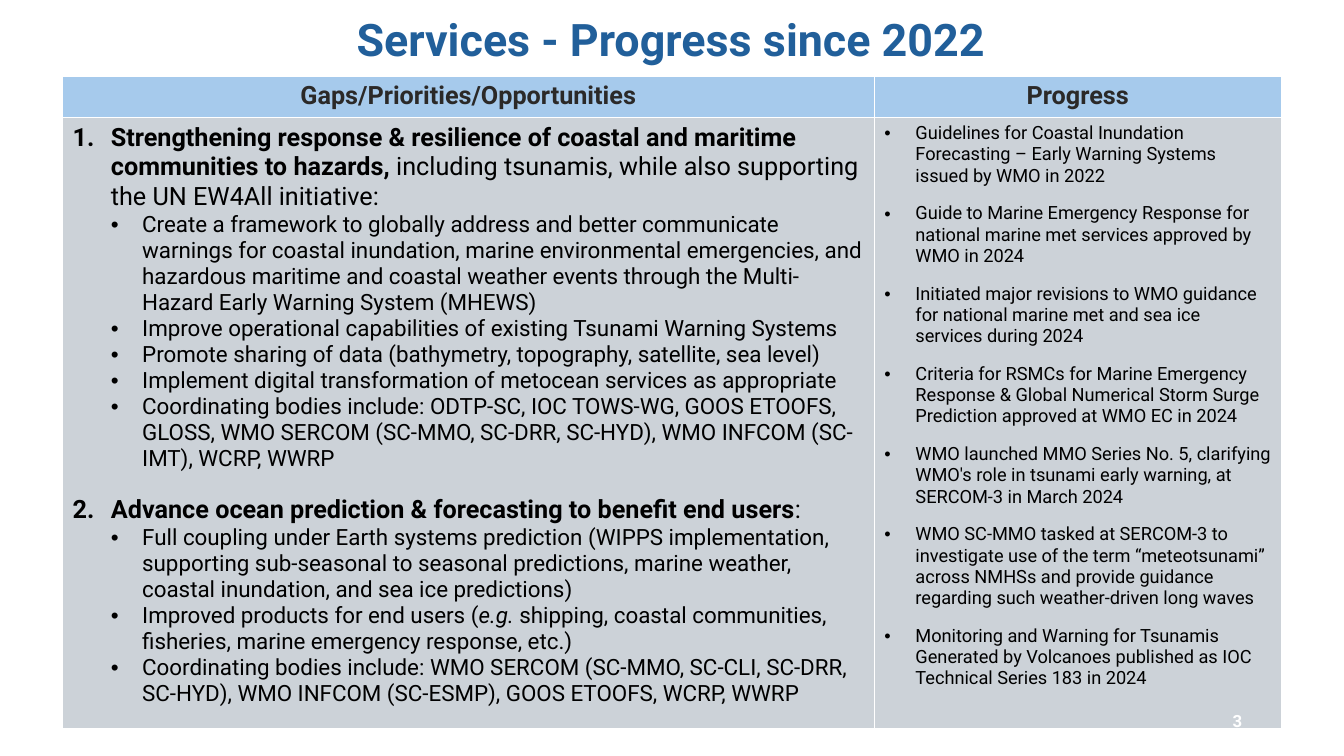
from dataclasses import dataclass

from lxml import etree
from pptx import Presentation
from pptx.dml.color import RGBColor
from pptx.enum import text
from pptx.oxml import ns
from pptx.util import Inches, Pt


@dataclass(frozen=True)
class Theme:
    font: str = "Roboto"
    title: str = "215F9A"
    heading: str = "2B2928"
    body: str = "000000"
    white: str = "FFFFFF"
    header_fill: str = "A6CAEC"
    body_fill: str = "CCD2D8"
    title_size: int = 32
    heading_size: int = 18
    point_size: int = 16
    progress_size: int = 13
    number_size: int = 12


THEME = Theme()
ALIGN = text.PP_ALIGN

# Each priority: bold lead, plain continuation, points made of (text, italic) runs
PRIORITIES = [
    ("Strengthening response & resilience of coastal and maritime communities to hazards, ",
     "including tsunamis, while also supporting the UN EW4All initiative:",
     [[("Create a framework to globally address and better communicate warnings for coastal "
        "inundation, marine environmental emergencies, and hazardous maritime and coastal "
        "weather events through the Multi-Hazard Early Warning System (MHEWS)", False)],
      [("Improve operational capabilities of existing Tsunami Warning Systems", False)],
      [("Promote sharing of data (bathymetry, topography, satellite, sea level)", False)],
      [("Implement digital transformation of metocean services as appropriate", False)],
      [("Coordinating bodies include: ODTP-SC, IOC TOWS-WG, GOOS ETOOFS, GLOSS, WMO SERCOM "
        "(SC-MMO, SC-DRR, SC-HYD), WMO INFCOM (SC-IMT), WCRP, WWRP", False)]]),
    ("Advance ocean prediction & forecasting to benefit end users",
     ":",
     [[("Full coupling under Earth systems prediction (WIPPS implementation, supporting "
        "sub-seasonal to seasonal predictions, marine weather, coastal inundation, and sea "
        "ice predictions)", False)],
      [("Improved products for end users (", False), ("e.g. ", True),
       ("shipping, coastal communities, fisheries, marine emergency response, etc.)", False)],
      [("Coordinating bodies include: WMO SERCOM (SC-MMO, SC-CLI, SC-DRR, SC-HYD), WMO "
        "INFCOM (SC-ESMP), GOOS ETOOFS, WCRP, WWRP", False)]]),
]

PROGRESS = [
    "Guidelines for Coastal Inundation Forecasting – Early Warning Systems issued by WMO in 2022",
    "Guide to Marine Emergency Response for national marine met services approved by WMO in 2024",
    "Initiated major revisions to WMO guidance for national marine met and sea ice services "
    "during 2024",
    "Criteria for RSMCs for Marine Emergency Response & Global Numerical Storm Surge Prediction "
    "approved at WMO EC in 2024",
    "WMO launched MMO Series No. 5, clarifying WMO's role in tsunami early warning, at SERCOM-3 "
    "in March 2024",
    "WMO SC-MMO tasked at SERCOM-3 to investigate use of the term “meteotsunami” across NMHSs "
    "and provide guidance regarding such weather-driven long waves",
    "Monitoring and Warning for Tsunamis Generated by Volcanoes published as IOC Technical "
    "Series 183 in 2024",
]


def add_run(paragraph, wording, size, color, bold=False, italic=False):
    run = paragraph.add_run()
    run.text = wording
    font = run.font
    font.name, font.size, font.bold, font.italic = THEME.font, Pt(size), bold, italic
    font.color.rgb = RGBColor.from_string(color)


def next_paragraph(frame):
    """Return the unused first paragraph, or a new one."""
    first = frame.paragraphs[0]
    return frame.add_paragraph() if first.runs else first


def set_marker(paragraph, margin, hanging, number=None):
    """Give a hanging number, or a bullet when there is no number."""
    props = paragraph._p.get_or_add_pPr()
    props.set("marL", str(Inches(margin)))
    props.set("indent", str(-Inches(hanging)))
    if number:
        etree.SubElement(props, ns.qn("a:buFont"), typeface="+mj-lt")
        etree.SubElement(props, ns.qn("a:buAutoNum"), type="arabicPeriod", startAt=str(number))
    else:
        etree.SubElement(props, ns.qn("a:buFont"), typeface="Arial")
        etree.SubElement(props, ns.qn("a:buChar"), char="•")


def style_cell(cell, fill):
    cell.fill.solid()
    cell.fill.fore_color.rgb = RGBColor.from_string(fill)
    props = cell._tc.get_or_add_tcPr()
    for position, side in enumerate(("lnL", "lnR", "lnT", "lnB")):
        border = etree.Element(ns.qn(f"a:{side}"), w=str(Pt(1)))
        solid = etree.SubElement(border, ns.qn("a:solidFill"))
        etree.SubElement(solid, ns.qn("a:srgbClr"), val=THEME.white)
        props.insert(position, border)


def fill_title(slide, left, top, width, height):
    title = slide.shapes.title
    title.left, title.top, title.width, title.height = map(Inches, (left, top, width, height))
    frame = title.text_frame
    frame.vertical_anchor = text.MSO_ANCHOR.TOP
    frame.auto_size = text.MSO_AUTO_SIZE.NONE
    heading = frame.paragraphs[0]
    heading.alignment = ALIGN.CENTER
    add_run(heading, "Services - Progress since 2022", THEME.title_size, THEME.title, bold=True)


def fill_priorities(frame):
    for number, (lead, continuation, points) in enumerate(PRIORITIES, 1):
        priority = next_paragraph(frame)
        if number > 1:
            priority.space_before = Pt(16.5)
        set_marker(priority, 0.38, 0.38, number)
        add_run(priority, lead, THEME.heading_size, THEME.body, bold=True)
        add_run(priority, continuation, THEME.heading_size, THEME.body)
        for runs in points:
            point = frame.add_paragraph()
            point.level = 1
            set_marker(point, 0.69, 0.31)
            for wording, italic in runs:
                add_run(point, wording, THEME.point_size, THEME.body, italic=italic)


def fill_progress(frame):
    for achievement in PROGRESS:
        item = next_paragraph(frame)
        item.space_after = Pt(12)
        set_marker(item, 0.31, 0.31)
        add_run(item, achievement, THEME.progress_size, THEME.body)


def add_progress_table(slide, left, top, width, height):
    header_height, priorities_width = 0.41, 8.05
    table = slide.shapes.add_table(2, 2, *map(Inches, (left, top, width, height))).table
    table.columns[0].width = Inches(priorities_width)
    table.columns[1].width = Inches(width - priorities_width)
    table.rows[0].height = Inches(header_height)
    table.rows[1].height = Inches(height - header_height)

    columns = [("Gaps/Priorities/Opportunities", fill_priorities), ("Progress", fill_progress)]
    for index, (heading, fill_body) in enumerate(columns):
        header, body = table.cell(0, index), table.cell(1, index)
        style_cell(header, THEME.header_fill)
        style_cell(body, THEME.body_fill)
        label = header.text_frame.paragraphs[0]
        label.alignment = ALIGN.CENTER
        add_run(label, heading, THEME.heading_size, THEME.heading, bold=True)
        fill_body(body.text_frame)


def add_slide_number(slide, left, top, width, height):
    frame = slide.shapes.add_textbox(*map(Inches, (left, top, width, height))).text_frame
    frame.word_wrap = True
    frame.vertical_anchor = text.MSO_ANCHOR.MIDDLE
    number = frame.paragraphs[0]
    number.alignment = ALIGN.RIGHT
    add_run(number, "3", THEME.number_size, THEME.white, bold=True)


def main():
    deck = Presentation()
    deck.slide_width, deck.slide_height = Inches(13.33), Inches(7.5)
    slide = deck.slides.add_slide(deck.slide_layouts.get_by_name("Title Only"))
    fill_title(slide, 0.96, 0.07, 11.39, 0.64)
    add_progress_table(slide, 0.62, 0.76, 12.09, 6.47)
    add_slide_number(slide, 9.42, 6.95, 3, 0.4)
    deck.save("out.pptx")


if __name__ == "__main__":
    main()
